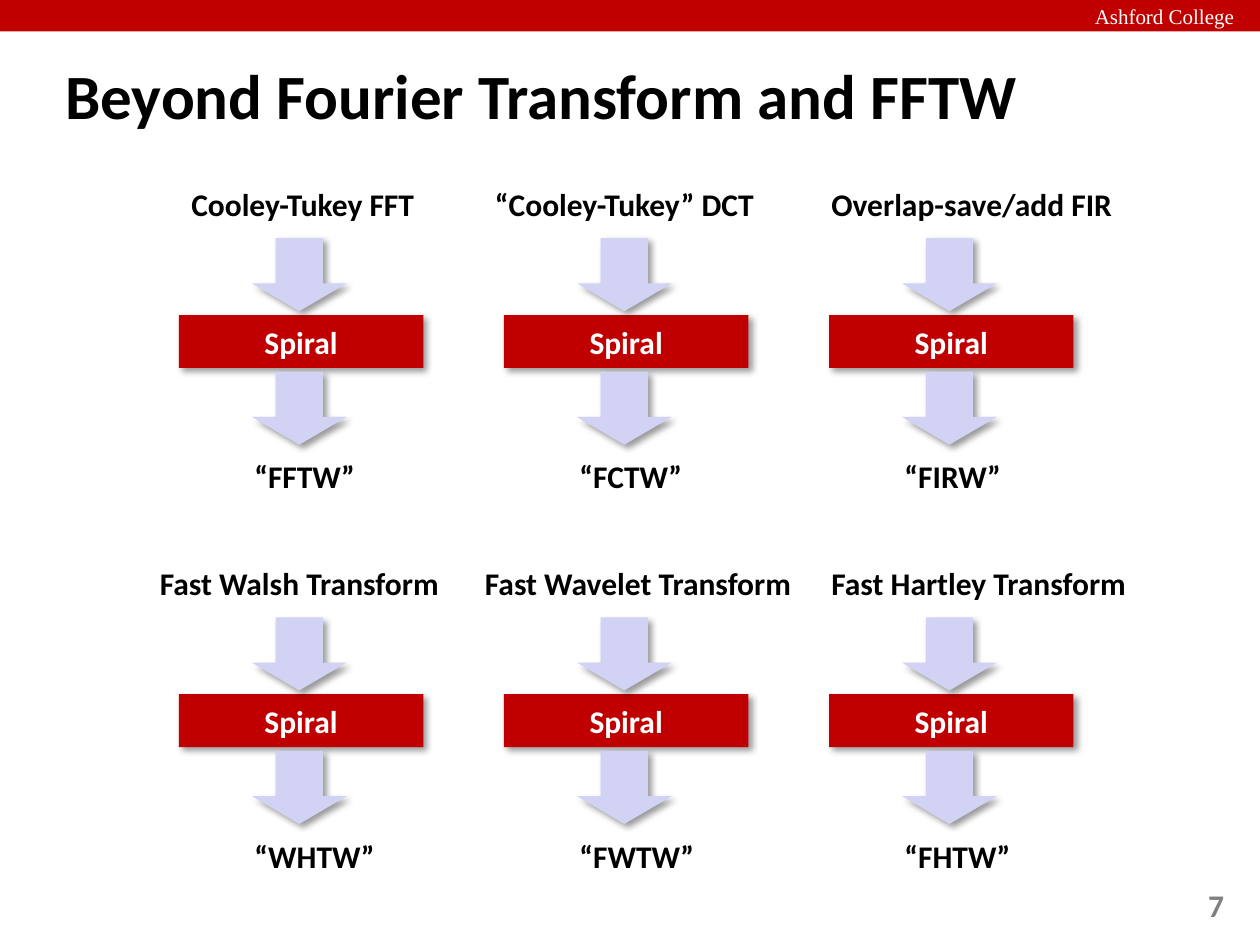
"""Build the slide on generated transform libraries beyond FFTW."""
import pptx
import pptx.dml.color
import pptx.enum.shapes
import pptx.enum.text
import pptx.oxml
import pptx.util
from pptx.util import Inches

SHAPE = pptx.enum.shapes.MSO_SHAPE
ALIGN = pptx.enum.text.PP_ALIGN
ANCHOR = pptx.enum.text.MSO_ANCHOR

TITLE = "Beyond Fourier Transform and FFTW"
INSTITUTION = "Ashford College"
PAGE = "7"
GENERATOR = "Spiral"
PIPELINES = [
    [
        ("Cooley-Tukey FFT", "“FFTW”", 0, 2),
        ("“Cooley-Tukey” DCT", "“FCTW”", -0.17, 2.42),
        ("Overlap-save/add FIR", "“FIRW”", -0.08, 2.67),
    ],
    [
        ("Fast Walsh Transform", "“WHTW”", -0.25, 2.5),
        ("Fast Wavelet Transform", "“FWTW”", -0.25, 2.75),
        ("Fast Hartley Transform", "“FHTW”", -0.08, 2.67),
    ],
]

THEME = {
    "red": "C00000", "lavender": "D2D2F4",
    "title": {"name": "Calibri", "size": 36, "bold": True, "color": "000000"},
    "label": {"name": "Calibri", "size": 18, "bold": True, "color": "000000"},
    "box": {"name": "Calibri", "size": 18, "bold": True, "color": "FFFFFF"},
    "page": {"name": "Calibri", "size": 18, "bold": True, "color": "808080"},
    "institution": {"name": "Times New Roman", "size": 12, "bold": False, "color": "FFFFFF"},
}
LEFT, TOP = 1.42, 1.42
COLUMN_STEP, ROW_STEP = 2.58, 3.01
ARROW_OFFSETS = (0.47, 1.53)

SHADOW = (
    '<a:effectLst xmlns:a="http://schemas.openxmlformats.org/drawingml/2006/main">'
    '<a:outerShdw blurRad="50800" dist="38100" dir="2700000" algn="tl" rotWithShape="0">'
    '<a:srgbClr val="000000"><a:alpha val="40000"/></a:srgbClr>'
    "</a:outerShdw></a:effectLst>"
)


def rgb(value):
    return pptx.dml.color.RGBColor.from_string(value)


def write(holder, text, role, align=ALIGN.LEFT, **frame_format):
    frame = holder.text_frame
    for name, value in frame_format.items():
        setattr(frame, name, value)
    paragraph = frame.paragraphs[0]
    paragraph.alignment = align
    run = paragraph.add_run()
    run.text = text
    for name, value in THEME[role].items():
        if name == "color":
            run.font.color.rgb = rgb(value)
        else:
            setattr(run.font, name, pptx.util.Pt(value) if name == "size" else value)


def add_label(slide, area, text, role="label", wrap=True):
    label = slide.shapes.add_textbox(*map(Inches, area))
    write(label, text, role, word_wrap=wrap)


def add_block(slide, kind, area, fill, shadow=True):
    block = slide.shapes.add_shape(kind, *map(Inches, area))
    block.fill.solid()
    block.fill.fore_color.rgb = rgb(THEME[fill])
    block.line.fill.background()
    block.shadow.inherit = False
    if shadow:
        properties = block.element.spPr
        properties.replace(properties.find(pptx.oxml.ns.qn("a:effectLst")),
                           pptx.oxml.parse_xml(SHADOW))
    return block


def add_pipeline(slide, left, top, algorithm, library, shift, width):
    generator = add_block(slide, SHAPE.RECTANGLE, (left, top + 1.08, 1.94, 0.42), "red")
    write(generator, GENERATOR, "box", ALIGN.CENTER,
          word_wrap=False, vertical_anchor=ANCHOR.MIDDLE)
    for offset in ARROW_OFFSETS:
        arrow = add_block(slide, SHAPE.DOWN_ARROW,
                          (left + 0.58, top + offset, 0.75, 0.58), "lavender")
        arrow.adjustments[0] = 0.5
        arrow.adjustments[1] = 0.38
    add_label(slide, (left + 0.5, top + 2.16, 1.58, 0.4), library)
    add_label(slide, (left + shift, top, width, 0.4), algorithm)


def main():
    deck = pptx.Presentation()
    deck.slide_width, deck.slide_height = Inches(10), Inches(7.5)
    slide = deck.slides.add_slide(deck.slide_layouts[5])

    add_block(slide, SHAPE.RECTANGLE, (0, 0, 10, 0.25), "red", shadow=False)
    add_label(slide, (8.59, -0.02, 1.39, 0.3), INSTITUTION, "institution", wrap=False)

    title = slide.shapes.title
    title.left, title.top, title.width, title.height = map(Inches, (0.42, 0.33, 9.4, 0.83))
    write(title, TITLE, "title", vertical_anchor=ANCHOR.MIDDLE)

    for row, pipelines in enumerate(PIPELINES):
        for column, pipeline in enumerate(pipelines):
            add_pipeline(slide, LEFT + column * COLUMN_STEP, TOP + row * ROW_STEP, *pipeline)

    add_label(slide, (9.49, 6.98, 0.59, 0.52), PAGE, "page")
    deck.save("out.pptx")


if __name__ == "__main__":
    main()
